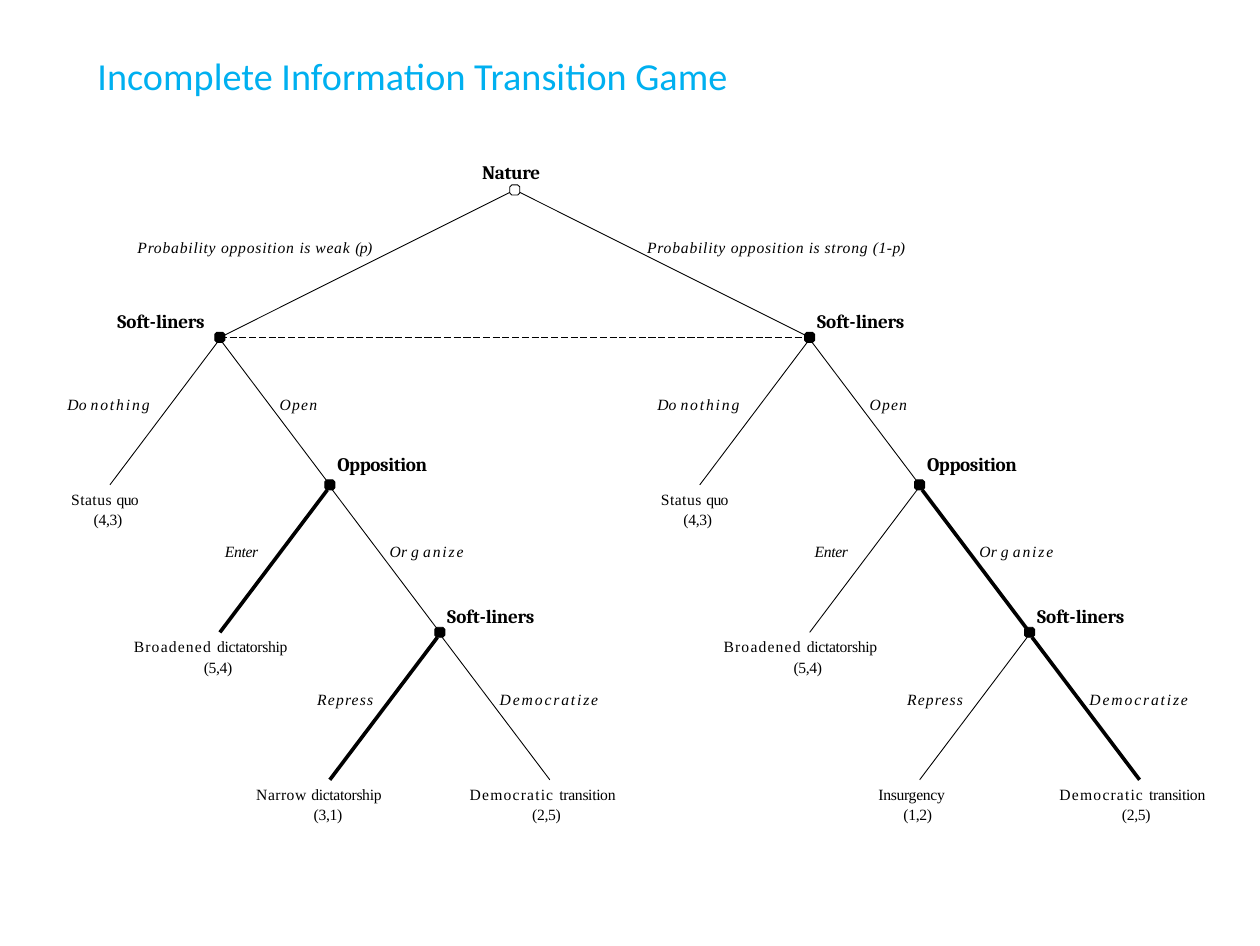
import pptx
import pptx.util
import pptx.dml.color
import pptx.enum.dml
import pptx.enum.shapes
import pptx.enum.text
import pptx.oxml.ns
import lxml.etree

# Content: every text is a list of (words, letter spacing in points)
TITLE = [("Incomplete Information Transition Game", 0)]
NATURE = [("Nature", -0.1)]
SOFT_LINERS = [("Soft-", 0), ("liners", -0.1)]
OPPOSITION = [("Opposition", -0.1)]
WEAK = [("Probability opposition ", 0.2), ("is ", 0.1), ("weak ", 0.2), ("(p)", -0.2)]
STRONG = [("Probability opposition", 0.2), (" is ", 0.1), ("strong", 0.2),
          (" (1-", 0.1), ("p)", -0.2)]

# Outcomes: text, box width, hanging indent
STATUS_QUO = ([("Status ", 0.1), ("quo ", -0.2), ("(4,3)", -0.1)], 0.33, 0.09)
BROADENED = ([("Broadened ", 0.3), ("dictatorship (5,4)", -0.1)], 0.71, 0.28)
NARROW = ([("Narrow ", 0.1), ("dictatorship (3,1)", -0.1)], 0.61, 0.23)
INSURGENCY = ([("Insurgency (1,2)", -0.1)], 0.35, 0.1)
TRANSITION = ([("Democratic ", 0.3), ("transition (2,5)", -0.1)], 0.66, 0.25)

# Moves, one row per decision: player, label rise, label width,
# then (text, width) of the left and the right action
DECISIONS = [
    (SOFT_LINERS, 0.12, 0.4,
     ([("Do ", 0), ("nothing", 0.5)], 0.39), ([("Open", 0.3)], 0.2)),
    (OPPOSITION, 0.14, 0.43,
     ([("Enter", -0.1)], 0.2), ([("Or g ", 0), ("anize", 0.5)], 0.33)),
    (SOFT_LINERS, 0.12, 0.4,
     ([("Repress", 0.3)], 0.27), ([("Democratize", 0.5)], 0.44)),
]

# Subtrees: left outcomes from top to bottom, chosen (level, side) branches
SUBTREES = [
    ([STATUS_QUO, BROADENED, NARROW], {(1, -1), (2, -1)}),
    ([STATUS_QUO, BROADENED, INSURGENCY], {(1, 1), (2, 1)}),
]

# Slide size in points, grid in inches
WIDTH, HEIGHT = 363, 272.5
LEFT, TOP = 0.88, 1.35
COLUMN, ROW, SUBTREE_GAP = 0.44, 0.59, 2.36
NATURE_X, NATURE_Y = LEFT + SUBTREE_GAP / 2, 0.76
NODE = 0.04
THIN, THICK = 0.25, 1.06
BLACK, SKY = "000000", "00B0F0"

inch = pptx.util.Inches
deck = pptx.Presentation()
deck.slide_width, deck.slide_height = pptx.util.Pt(WIDTH), pptx.util.Pt(HEIGHT)
page = deck.slides.add_slide(deck.slide_layouts[5])


def colour(code):
    return pptx.dml.color.RGBColor.from_string(code)


def write(box, spans, font, size, code=BLACK, bold=False, italic=False,
          before=1, hanging=0):
    frame = box.text_frame
    frame.margin_left = frame.margin_right = frame.margin_bottom = 0
    frame.margin_top = inch(0.01)
    frame.word_wrap = True
    frame.auto_size = pptx.enum.text.MSO_AUTO_SIZE.SHAPE_TO_FIT_TEXT
    frame.vertical_anchor = pptx.enum.text.MSO_ANCHOR.TOP
    para = frame.paragraphs[0]
    para.alignment = pptx.enum.text.PP_ALIGN.LEFT
    para.space_before = pptx.util.Pt(before)
    if hanging:
        para.line_spacing = 1.11
    indents = para._p.get_or_add_pPr()
    indents.set("marL", str(inch(0.01 + hanging)))
    indents.set("indent", str(-inch(hanging)))
    for words, spacing in spans:
        span = para.add_run()
        span.text = words
        span.font.name = font
        span.font.size = pptx.util.Pt(size)
        span.font.bold, span.font.italic = bold, italic
        span.font.color.rgb = colour(code)
        if spacing:
            span._r.get_or_add_rPr().set("spc", str(round(spacing * 100)))


def text_box(x, y, width, height):
    return page.shapes.add_textbox(inch(x), inch(y), inch(width), inch(height))


def player(spans, x, y, width):
    write(text_box(x, y, width, 0.12), spans, "Cambria", 5.5, bold=True)


def action(spans, x, y, width):
    write(text_box(x, y, width, 0.1), spans, "Times New Roman", 4.5,
          italic=True, before=1.1)


def outcome(entry, x, y):
    spans, width, hanging = entry
    write(text_box(x - width / 2, y, width, 0.19), spans, "Times New Roman", 4.5,
          before=0.9, hanging=hanging)


def branch(x1, y1, x2, y2, weight=THIN, dash=None):
    line = page.shapes.add_connector(pptx.enum.shapes.MSO_CONNECTOR.STRAIGHT,
                                     inch(x1), inch(y1), inch(x2), inch(y2))
    line.line.color.rgb = colour(BLACK)
    line.line.width = pptx.util.Pt(weight)
    if dash:
        line.line.dash_style = dash
    lxml.etree.SubElement(line._element.spPr, pptx.oxml.ns.qn("a:effectLst"))


def node(x, y, filled=True):
    shape = page.shapes.add_shape(pptx.enum.shapes.MSO_SHAPE.OCTAGON,
                                  inch(x - NODE / 2), inch(y - NODE / 2),
                                  inch(NODE), inch(NODE))
    shape.adjustments[0] = 0.2
    shape.shadow.inherit = False
    shape.line.color.rgb = colour(BLACK)
    shape.line.width = pptx.util.Pt(THIN)
    if filled:
        shape.fill.solid()
        shape.fill.fore_color.rgb = colour(BLACK)
    else:
        shape.fill.background()


# Title
title = page.shapes.title
title.left, title.top, title.width, title.height = map(inch, (0.38, 0.2, 2.59, 0.2))
write(title, TITLE, "Calibri", 11, SKY, before=0.9)

# Nature's move
node(NATURE_X, NATURE_Y, filled=False)
player(NATURE, NATURE_X - 0.14, NATURE_Y - 0.13, 0.27)
for side in (-1, 1):
    branch(NATURE_X + side * 0.02, NATURE_Y + 0.01,
           NATURE_X + side * SUBTREE_GAP / 2, TOP)
action(WEAK, 0.54, 0.94, 0.98)
action(STRONG, 2.58, 0.94, 1.07)

# Information set joining the first decisions
branch(LEFT, TOP, LEFT + SUBTREE_GAP, TOP,
       dash=pptx.enum.dml.MSO_LINE.LONG_DASH)

# Subtrees
for tree, (outcomes, chosen) in enumerate(SUBTREES):
    for level, (name, rise, name_width, *actions) in enumerate(DECISIONS):
        x = LEFT + tree * SUBTREE_GAP + level * COLUMN
        y = TOP + level * ROW
        for side, (spans, width) in zip((-1, 1), actions):
            branch(x + side * 0.01, y + NODE / 2, x + side * COLUMN, y + ROW,
                   THICK if (level, side) in chosen else THIN)
            middle = x + side * COLUMN / 2
            action(spans, middle - width - 0.01 if side < 0 else middle + 0.01,
                   y + 0.22, width)
        node(x, y)
        outer = tree == 0 and level == 0
        player(name, x - name_width - 0.02 if outer else x + NODE / 2,
               y - rise, name_width)
        outcome(outcomes[level], x - COLUMN, y + ROW)
    outcome(TRANSITION, x + COLUMN, y + ROW)

deck.save("out.pptx")
